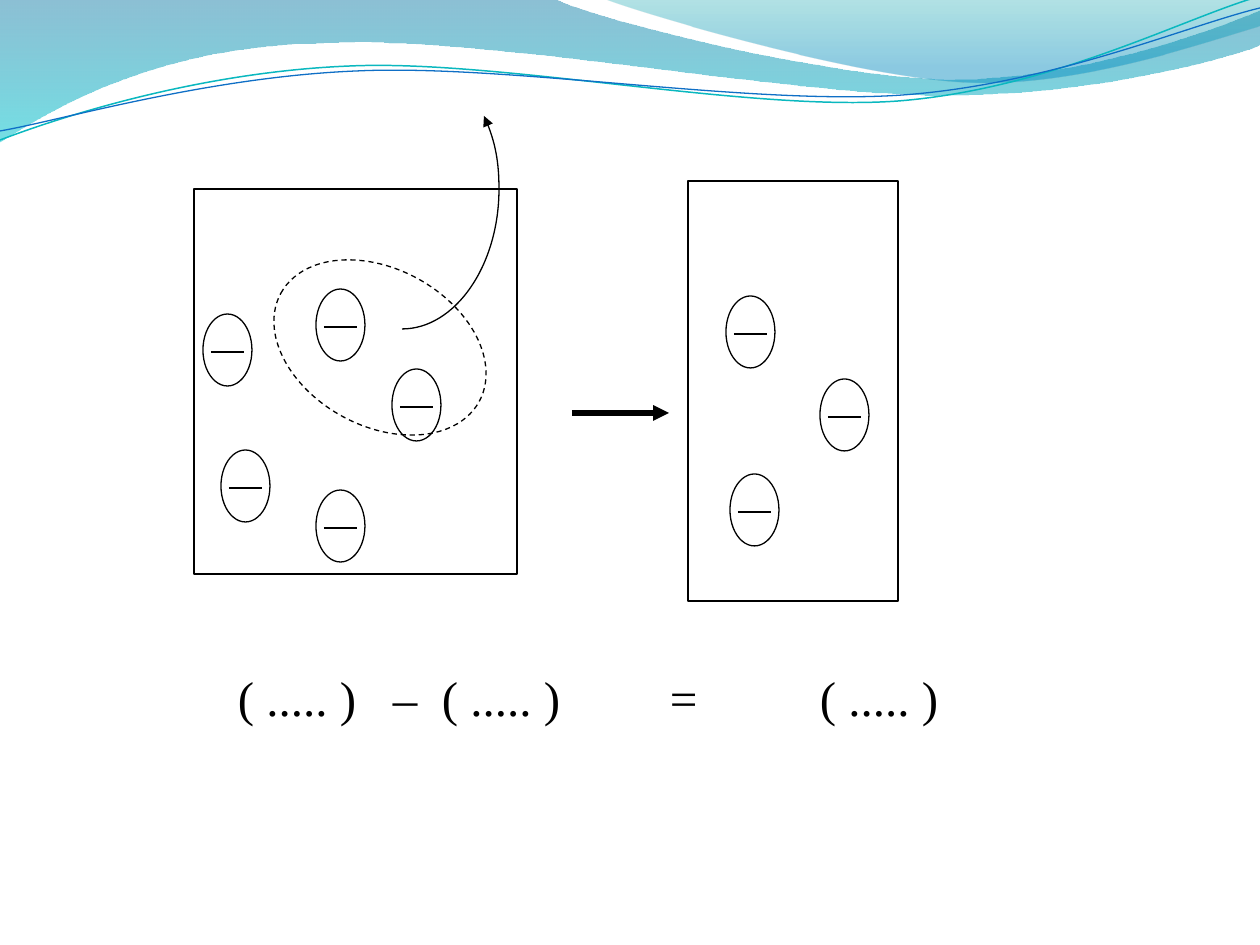
from lxml import etree
from pptx import Presentation
from pptx.dml.color import RGBColor
from pptx.enum.dml import MSO_LINE
from pptx.enum.shapes import MSO_CONNECTOR, MSO_SHAPE
from pptx.oxml.ns import qn
from pptx.util import Pt

PX = 914400 / 126
BLACK = RGBColor(0x00, 0x00, 0x00)
TEAL = RGBColor(0x0A, 0xB8, 0xBF)
BLUE = RGBColor(0x0F, 0x6F, 0xC6)
WAVE_TOP = RGBColor(0x00, 0x74, 0xA1)
WAVE_BOTTOM = RGBColor(0x00, 0xC6, 0xCF)
CREST_TOP = RGBColor(0x00, 0xA1, 0xA9)
CREST_BOTTOM = RGBColor(0x00, 0x8B, 0xBF)


def px(*values):
    return [round(v * PX) for v in values]


def curve(shapes, start, segments, close=False):
    """Draw a freeform from straight (one point) and cubic (three point) segments."""
    fb = shapes.build_freeform(*px(*start))
    fb.add_line_segments([px(*seg[-1]) for seg in segments], close=close)
    sp = fb.convert_to_shape()
    sp.shadow.inherit = False
    # Turn the straight segments into true curves
    outline = sp._element.spPr.find(".//" + qn("a:path"))
    for old, seg in zip(outline.findall(qn("a:lnTo")), segments):
        if len(seg) == 3:
            cubic = etree.Element(qn("a:cubicBezTo"))
            for x, y in (px(*point) for point in seg):
                etree.SubElement(cubic, qn("a:pt"), x=str(x - sp.left), y=str(y - sp.top))
            outline.replace(old, cubic)
    return sp


prs = Presentation()
prs.slide_width, prs.slide_height = px(1260, 945)
s = prs.slides.add_slide(prs.slide_layouts[6])

# Gradient waves: start, segments, gradient stops (position, colour, opacity %)
waves = [
    ((0, 0), [[(554, -1)],
              [(600, 21), (837, 79), (955, 79)], [(1075, 79), (1207, 33), (1260, 11)],
              [(1261, 45)],
              [(1239, 55), (1096, 96), (940, 95)], [(784, 95), (481, 35), (324, 43)],
              [(163, 45), (58, 105), (-1, 142)]],
     [(0, WAVE_TOP, 45), (1, WAVE_BOTTOM, 55)]),
    ((604, -1), [[(641, 14), (859, 78), (969, 82)], [(1079, 87), (1211, 40), (1260, 26)],
                 [(1260, 0)]],
     [(0, CREST_TOP, 30), (0.8, CREST_BOTTOM, 45)]),
]
for start, segments, stops in waves:
    sp = curve(s.shapes, start, segments, close=True)
    sp.line.fill.background()
    sp.fill.gradient()
    sp.fill.gradient_angle = 270
    for stop, (position, color, opacity) in zip(sp.fill.gradient_stops, stops):
        stop.position = position
        stop.color.rgb = color
    for rgb, (position, color, opacity) in zip(sp._element.spPr.iter(qn("a:srgbClr")), stops):
        etree.SubElement(rgb, qn("a:alpha"), val=str(opacity * 1000))

# Thin wave lines
strokes = [
    ((0, 140), [[(60, 117), (199, 72), (349, 66)], [(498, 59), (747, 112), (898, 101)],
                [(1050, 89), (1182, 19), (1257, -3)]], TEAL, 0.85),
    ((0, 131), [[(59, 121), (207, 77), (357, 71)], [(508, 64), (752, 106), (903, 95)],
                [(1053, 84), (1186, 26), (1260, 8)]], BLUE, 0.75),
    # Curved arrow for the removed charges
    ((402, 329), [[(455, 329), (499, 266), (499, 189)], [(499, 162), (494, 137), (484, 116)]],
     BLACK, 0.75),
]
for start, segments, color, width in strokes:
    removal_arrow = curve(s.shapes, start, segments)
    removal_arrow.fill.background()
    removal_arrow.line.color.rgb = color
    removal_arrow.line.width = Pt(width)
etree.SubElement(removal_arrow.line._get_or_add_ln(), qn("a:tailEnd"), type="triangle")

# Boxes, dashed selection and negative charges
charges = [(203, 314), (221, 450), (316, 289), (316, 490), (392, 369),
           (726, 296), (730, 474), (820, 379)]
outlines = [(MSO_SHAPE.RECTANGLE, 194, 189, 323, 385, 0),
            (MSO_SHAPE.RECTANGLE, 688, 181, 210, 420, 0),
            (MSO_SHAPE.OVAL, 267, 269, 226, 157, 28.6)]
outlines += [(MSO_SHAPE.OVAL, x, y, 49, 72, 0) for x, y in charges]
for kind, x, y, w, h, angle in outlines:
    sp = s.shapes.add_shape(kind, *px(x, y, w, h))
    sp.shadow.inherit = False
    sp.fill.background()
    sp.line.color.rgb = BLACK
    sp.line.width = Pt(0.75)
    sp.rotation = angle
    if angle:
        sp.line.dash_style = MSO_LINE.DASH

# Minus signs and the arrow between the boxes
lines = [(x + 8, y + 38, x + 41, y + 38, 0.75) for x, y in charges]
lines.append((572, 413, 669, 413, 3))
for x1, y1, x2, y2, width in lines:
    step_arrow = s.shapes.add_connector(MSO_CONNECTOR.STRAIGHT, *px(x1, y1, x2, y2))
    step_arrow.line.color.rgb = BLACK
    step_arrow.line.width = Pt(width)
    etree.SubElement(step_arrow._element.spPr, qn("a:effectLst"))
etree.SubElement(step_arrow.line._get_or_add_ln(), qn("a:tailEnd"), type="triangle")

# Subtraction to fill in, spaced by tab stops
sp = s.shapes.add_textbox(*px(213, 661, 745, 72))
tf = sp.text_frame
tf.word_wrap = True
tf.margin_left = px(25)[0]
p = tf.paragraphs[0]
p.text = "( ..... )\t–\t( ..... )\t=\t( ..... )"
tabs = etree.SubElement(p._p.get_or_add_pPr(), qn("a:tabLst"))
for position in px(155, 204, 432, 582):
    etree.SubElement(tabs, qn("a:tab"), pos=str(position), algn="l")
for r in p.runs:
    r.font.name = "Times New Roman"
    r.font.size = Pt(28)
    r.font.color.rgb = BLACK

prs.save("out.pptx")
